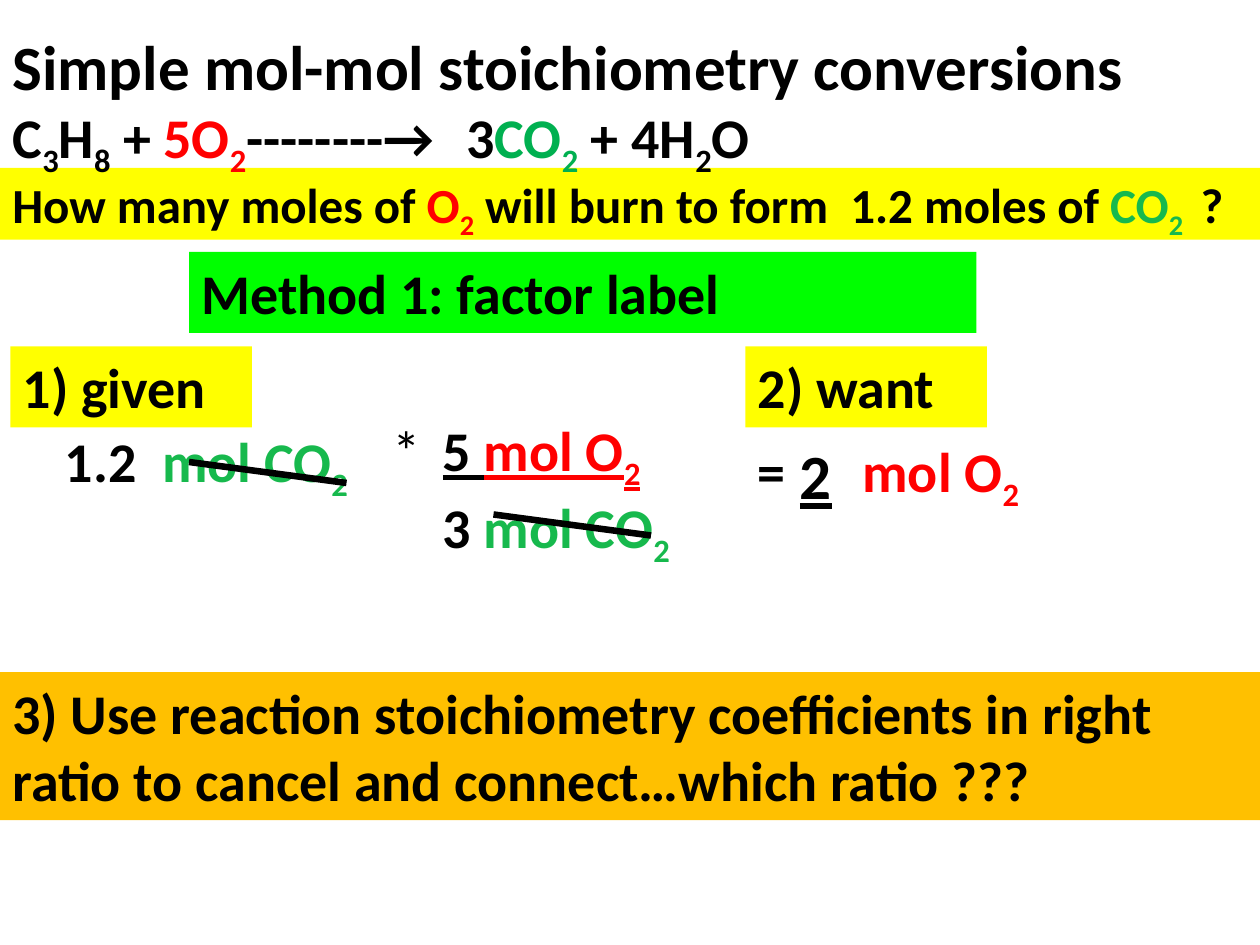
"""Build a slide on mole-to-mole stoichiometry by the factor label method."""
from dataclasses import dataclass

from lxml import etree
from pptx import Presentation
from pptx.dml.color import RGBColor
from pptx.enum.shapes import MSO_CONNECTOR, MSO_SHAPE
from pptx.enum.text import MSO_ANCHOR, PP_ALIGN
from pptx.oxml.ns import qn
from pptx.util import Inches, Pt

RECT = MSO_SHAPE.RECTANGLE
STRAIGHT = MSO_CONNECTOR.STRAIGHT
TOP = MSO_ANCHOR.TOP
LEFT = PP_ALIGN.LEFT


@dataclass(frozen=True)
class Theme:
    font: str = "Calibri"
    black: str = "000000"
    white: str = "FFFFFF"
    red: str = "FF0000"
    green: str = "17B94D"
    leaf: str = "00B050"
    yellow: str = "FFFF00"
    lime: str = "00FF00"
    orange: str = "FFC000"
    large: int = 36
    body: int = 32
    small: int = 28
    strike: float = 3.75


T = Theme()
COLS, ROWS = 120, 90

prs = Presentation()
prs.slide_width, prs.slide_height = Inches(10), Inches(7.5)
col, row = prs.slide_width / COLS, prs.slide_height / ROWS
s = prs.slides.add_slide(prs.slide_layouts[5])


def write(tf, lines, size, tab=None):
    """Fill a frame with runs of (text, colour, flags): s subscript, u underline, n not bold."""
    tf.word_wrap, tf.vertical_anchor = True, TOP
    for i, runs in enumerate(lines):
        p = tf.add_paragraph() if i else tf.paragraphs[0]
        p.alignment = LEFT
        if tab:
            tabs = etree.SubElement(p._p.get_or_add_pPr(), qn("a:tabLst"))
            etree.SubElement(tabs, qn("a:tab"), pos=str(Inches(tab)), algn="l")
        for text, color, flags in runs:
            r = p.add_run()
            r.text = text
            r.font.name, r.font.size = T.font, Pt(size)
            r.font.bold = "n" not in flags
            r.font.underline = "u" in flags
            r.font.color.rgb = RGBColor.from_string(color)
            if "s" in flags:
                r.font._element.set("baseline", "-25000")


def box(x, y, w, h, fill, lines, size=T.body, tab=None):
    """Add a text box, or a filled rectangle when a fill is given, on the grid."""
    place = [int(v) for v in (x * col, y * row, w * col, h * row)]
    if fill:
        sp = s.shapes.add_shape(RECT, *place)
        sp.shadow.inherit = False
        sp.fill.solid()
        sp.fill.fore_color.rgb = RGBColor.from_string(fill)
        sp.line.fill.background()
    else:
        sp = s.shapes.add_textbox(*place)
    write(sp.text_frame, lines, size, tab)


oxygen = [("mol O", T.red, ""), ("2", T.red, "s")]
dioxide = [("mol CO", T.green, ""), ("2", T.green, "s")]

box(0, 16, COLS, 6.84, T.yellow, [[
    ("How many moles of ", T.black, ""), ("O", T.red, ""), ("2", T.red, "s"),
    (" will burn to form  1.2 moles of ", T.black, ""),
    ("CO", T.green, ""), ("2 ", T.green, "s"), (" ?", T.black, "")]], T.small)

title = s.shapes.title
title.left, title.top = 0, int(2 * row)
title.width, title.height = prs.slide_width, int(15 * row)
title.element.getparent().append(title.element)
write(title.text_frame, [
    [("Simple mol-mol stoichiometry conversions", T.black, "")],
    [("C", T.black, ""), ("3", T.black, "s"), ("H", T.black, ""), ("8", T.black, "s"),
     (" + ", T.black, ""), ("5O", T.red, ""), ("2", T.red, "s"),
     ("--------→ \t 3", T.black, ""), ("CO", T.leaf, ""), ("2", T.leaf, "s"),
     (" + 4H", T.black, ""), ("2", T.black, "s"), ("O", T.black, "")]], T.body)
title.text_frame.paragraphs[0].runs[0].font.size = Pt(T.large)

box(18, 24, 75, 7.7, T.lime, [[("Method 1: factor label", T.black, "")]])
box(5, 40, 36, 7.7, None, [[("1.2  ", T.black, ""), *dioxide]])
box(35, 39, 31, 20, None, [
    [(" *\t", T.black, "n"), ("5 ", T.black, "u"),
     *[(text, color, flags + "u") for text, color, flags in oxygen]],
    [("\t3 ", T.black, ""), *dioxide]], tab=0.5)
box(71, 41, 33, 7.7, T.white, [[("=\t", T.black, ""), *oxygen]], tab=0.83)
box(75, 41, 7, 8.5, T.white, [[("2", T.black, "u")]], T.large)

for x, label in ((1, "1) given"), (71, "2) want")):
    box(x, 33, 23, 7.7, T.yellow, [[(label, T.black, "")]])

box(0, 64, COLS, 14.1, T.orange, [[(
    "3) Use reaction stoichiometry coefficients in right ratio to cancel and "
    "connect…which ratio ???", T.black, "")]])

for x, y in ((47, 49), (18, 44)):
    line = s.shapes.add_connector(
        STRAIGHT, int(x * col), int(y * row), int((x + 15) * col), int((y + 2) * row))
    line.line.color.rgb = RGBColor.from_string(T.black)
    line.line.width = Pt(T.strike)
    etree.SubElement(line._element.spPr, qn("a:effectLst"))

prs.save("out.pptx")
